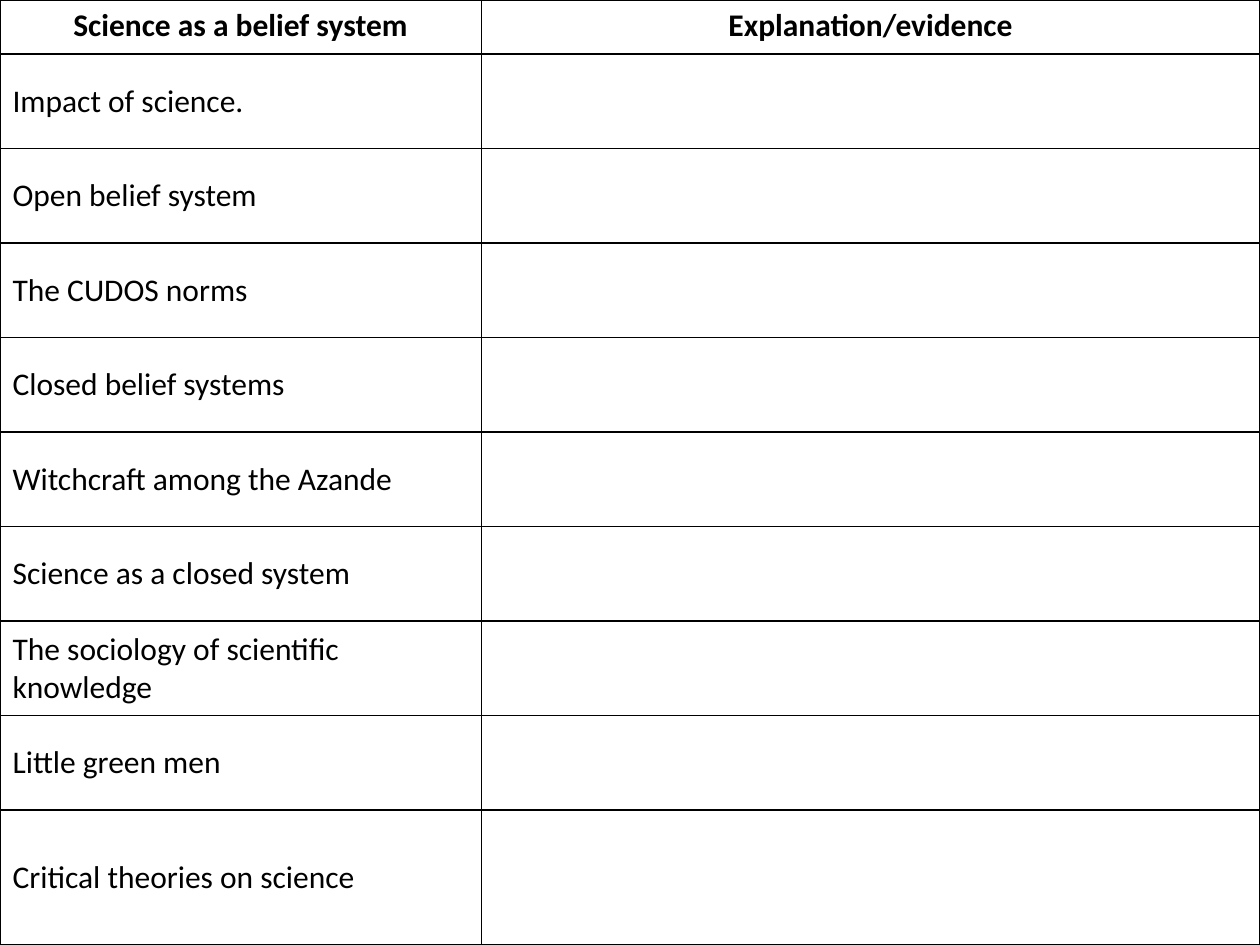
from dataclasses import dataclass

from lxml.etree import SubElement
from pptx import Presentation
from pptx.dml.color import RGBColor
from pptx.enum.text import MSO_ANCHOR, PP_ALIGN
from pptx.oxml.ns import qn
from pptx.util import Emu, Inches, Pt

EMU_PER_PX = Inches(1) // 100
SLIDE_WIDTH, SLIDE_HEIGHT = 1000, 750
TOPIC_WIDTH = 382
HEADER_HEIGHT, TOPIC_HEIGHT = 43, 75

HEADERS = ["Science as a belief system", "Explanation/evidence"]
TOPICS = [
    "Impact of science.",
    "Open belief system",
    "The CUDOS norms",
    "Closed belief systems",
    "Witchcraft among the Azande",
    "Science as a closed system",
    "The sociology of scientific knowledge",
    "Little green men",
    "Critical theories on science",
]


@dataclass(frozen=True)
class Theme:
    font: str = "Calibri"
    text_size: int = 18
    text_color: str = "000000"
    border_color: str = "000000"
    border_width: int = 1


def px(length):
    return Emu(length * EMU_PER_PX)


class SlideBuilder:
    def __init__(self, slide, theme):
        self.slide = slide
        self.theme = theme

    def add_table(self, left, top, column_widths, row_heights, rows):
        """Add a plain ruled table whose first row is the header."""
        frame = self.slide.shapes.add_table(
            len(row_heights), len(column_widths), px(left), px(top),
            px(sum(column_widths)), px(sum(row_heights)))
        table = frame.table
        table.horz_banding = False
        for column, width in zip(table.columns, column_widths):
            column.width = px(width)
        for row, height in zip(table.rows, row_heights):
            row.height = px(height)
        for row_index, texts in enumerate(rows):
            for column_index, text in enumerate(texts):
                self.format_cell(table.cell(row_index, column_index), text,
                                 is_header=row_index == 0)

    def format_cell(self, cell, text, is_header):
        cell.text = text
        cell.vertical_anchor = MSO_ANCHOR.TOP if is_header else MSO_ANCHOR.MIDDLE
        paragraph = cell.text_frame.paragraphs[0]
        paragraph.alignment = PP_ALIGN.CENTER if is_header else PP_ALIGN.LEFT
        font = paragraph.font
        font.name = self.theme.font
        font.size = Pt(self.theme.text_size)
        font.bold = is_header
        font.color.rgb = RGBColor.from_string(self.theme.text_color)
        self.add_borders(cell)
        cell.fill.background()

    def add_borders(self, cell):
        properties = cell._tc.get_or_add_tcPr()
        for side in ("a:lnL", "a:lnR", "a:lnT", "a:lnB"):
            line = SubElement(properties, qn(side),
                              w=str(Pt(self.theme.border_width)))
            fill = SubElement(line, qn("a:solidFill"))
            SubElement(fill, qn("a:srgbClr"), val=self.theme.border_color)


def main():
    presentation = Presentation()
    presentation.slide_width = px(SLIDE_WIDTH)
    presentation.slide_height = px(SLIDE_HEIGHT)
    blank_layout = presentation.slide_layouts[6]
    builder = SlideBuilder(presentation.slides.add_slide(blank_layout), Theme())

    # Worksheet table fills the slide; the last row takes the remaining height
    row_heights = [HEADER_HEIGHT] + [TOPIC_HEIGHT] * (len(TOPICS) - 1)
    row_heights.append(SLIDE_HEIGHT - sum(row_heights))
    column_widths = [TOPIC_WIDTH, SLIDE_WIDTH - TOPIC_WIDTH]
    rows = [HEADERS] + [[topic, ""] for topic in TOPICS]
    builder.add_table(0, 0, column_widths, row_heights, rows)

    presentation.save("out.pptx")


if __name__ == "__main__":
    main()
